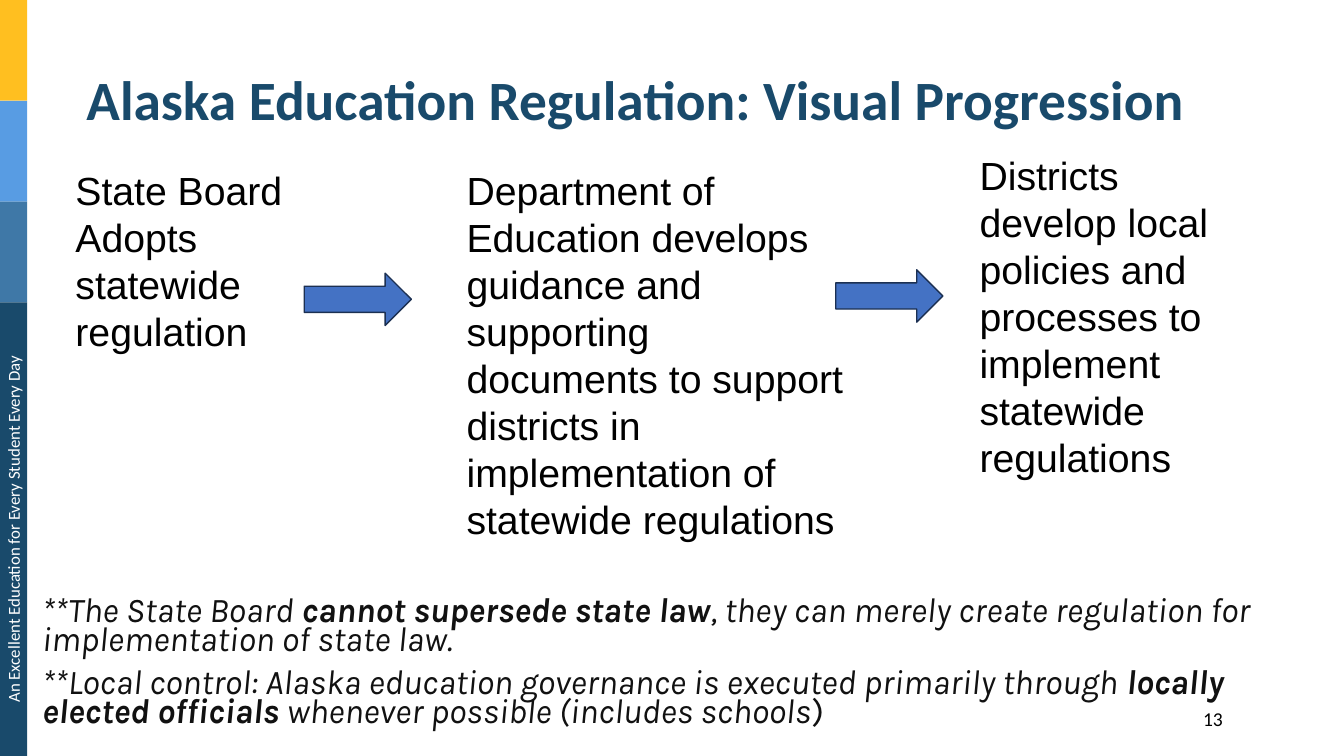
from pptx import Presentation
from pptx.dml.color import RGBColor
from pptx.enum.shapes import MSO_SHAPE
from pptx.enum.text import MSO_ANCHOR, PP_ALIGN
from pptx.util import Pt

RECTANGLE = MSO_SHAPE.RECTANGLE
ARROW = MSO_SHAPE.RIGHT_ARROW
TOP, MIDDLE = MSO_ANCHOR.TOP, MSO_ANCHOR.MIDDLE
LEFT, CENTER, RIGHT = PP_ALIGN.LEFT, PP_ALIGN.CENTER, PP_ALIGN.RIGHT

COLORS = {
    "navy": "194A6B",
    "steel": "3F78A7",
    "sky": "589CE3",
    "gold": "FFBF20",
    "arrow": "4472C4",
    "arrow_edge": "1C3052",
    "black": "000000",
    "note": "111111",
    "white": "FFFFFF",
}

BAND_WIDTH = 19.5
BANDS = [("gold", 72), ("sky", 72), ("steel", 72), ("navy", 324)]

STEPS = [
    ("State Board Adopts statewide regulation", 46.8, 115.2, 219.6, 143.3),
    ("Department of Education develops guidance and supporting documents "
     "to support districts in implementation of statewide regulations",
     326.2, 115.2, 285.8, 278.6),
    ("Districts develop local policies and processes to implement "
     "statewide regulations", 692.6, 104.4, 212.4, 244.8),
]

ARROWS = [(217.3, 195.1), (597, 192.7)]

NOTES = [
    [("**The State Board ", False, True),
     ("cannot supersede state law", True, True),
     (", they can merely create regulation for implementation of state law.",
      False, True)],
    [("**Local control: Alaska education governance is executed primarily "
      "through ", False, True),
     ("locally elected officials", True, True),
     (" whenever possible (includes schools", False, True),
     (")", False, False)],
]


def color(name):
    return RGBColor.from_string(COLORS[name])


def add_span(para, text, font, size, ink, bold=False, italic=False):
    span = para.add_run()
    span.text = text
    span.font.name = font
    span.font.size = Pt(size)
    span.font.color.rgb = color(ink)
    span.font.bold = bold
    span.font.italic = italic


def add_box(page, left, top, width, height, anchor=TOP):
    box = page.shapes.add_textbox(Pt(left), Pt(top), Pt(width), Pt(height))
    box.text_frame.word_wrap = True
    box.text_frame.vertical_anchor = anchor
    return box


def add_label(page, text, frame, font, size, ink, align=LEFT, anchor=TOP,
              bold=False, spacing=1.0):
    box = add_box(page, *frame, anchor)
    para = box.text_frame.paragraphs[0]
    para.alignment = align
    para.line_spacing = spacing
    add_span(para, text, font, size, ink, bold)
    return box


def add_block(page, kind, left, top, width, height, fill, edge=None):
    block = page.shapes.add_shape(kind, Pt(left), Pt(top), Pt(width), Pt(height))
    block.shadow.inherit = False
    block.fill.solid()
    block.fill.fore_color.rgb = color(fill)
    if edge:
        block.line.color.rgb = color(edge)
        block.line.width = Pt(1)
    else:
        block.line.fill.background()


def add_side_band(page):
    top = 0
    for fill, height in BANDS:
        add_block(page, RECTANGLE, 0, top, BAND_WIDTH, height, fill)
        top += height
    motto = add_label(page, "An Excellent Education for Every Student Every Day",
                      (-152.6, 367.2, 324, 21.6), "Calibri", 12, "white", CENTER)
    motto.rotation = 270


def add_notes(page):
    frame = add_box(page, 23, 424.1, 922.3, 107.3).text_frame
    for index, spans in enumerate(NOTES):
        para = frame.add_paragraph() if index else frame.paragraphs[0]
        para.line_spacing = 0.7
        para.space_before = Pt(10 if index else 0)
        for text, bold, italic in spans:
            add_span(para, text, "Karla", 24.8, "note", bold, italic)


def main():
    deck = Presentation()
    deck.slide_width, deck.slide_height = Pt(960), Pt(540)
    page = deck.slides.add_slide(deck.slide_layouts[6])
    add_label(page, "13", (819.4, 501.1, 61.2, 24.5), "Calibri", 14, "black", RIGHT)
    add_side_band(page)
    add_label(page, "Alaska Education Regulation: Visual Progression",
              (54.7, 41.8, 828, 62.6), "Calibri", 39.6, "navy",
              anchor=MIDDLE, bold=True, spacing=0.9)
    add_notes(page)
    for text, *frame in STEPS:
        add_label(page, text, frame, "Arial", 28, "black")
    for left, top in ARROWS:
        add_block(page, ARROW, left, top, 76.5, 37.4, "arrow", "arrow_edge")
    deck.save("out.pptx")


if __name__ == "__main__":
    main()
